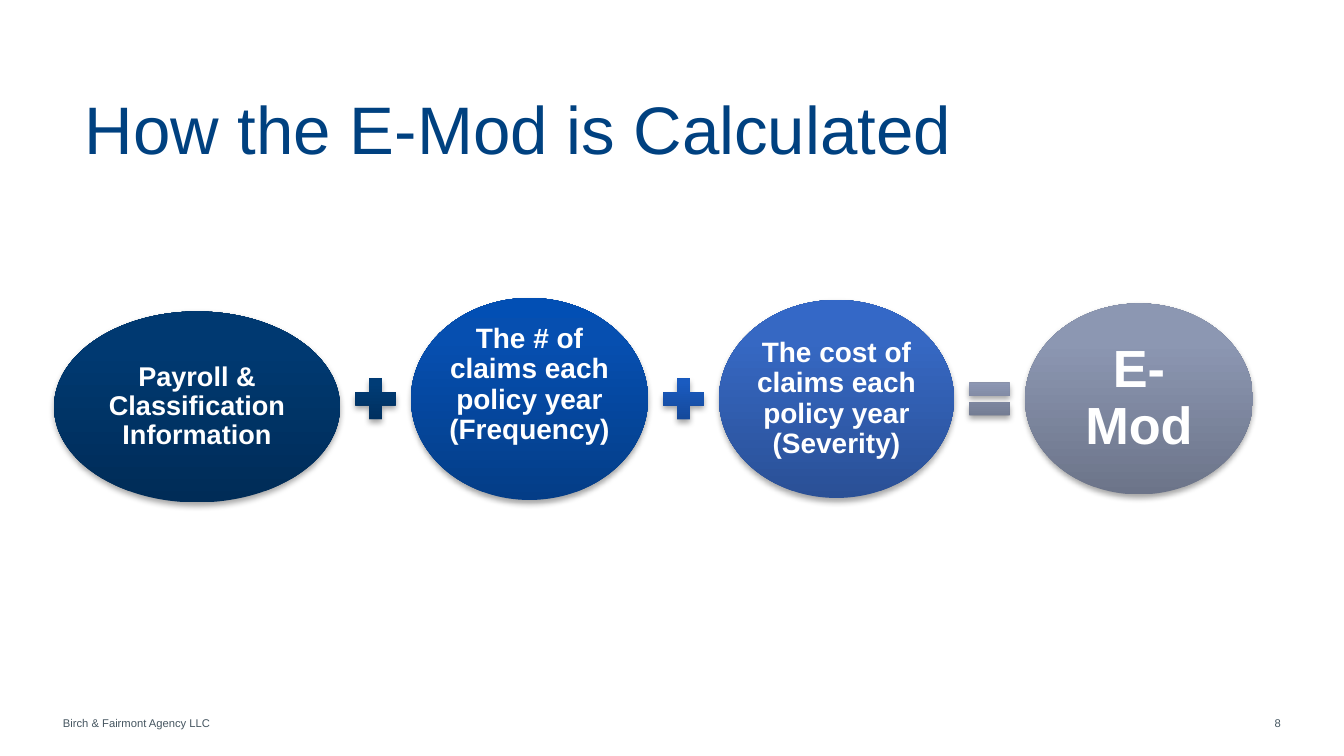
"""Build the slide showing how the E-Mod is calculated."""
import copy

import lxml.etree
import pptx
import pptx.dml.color
import pptx.enum.shapes
import pptx.enum.text
import pptx.oxml.ns
import pptx.util

PX = 914400 / 134.4
ALIGN = pptx.enum.text.PP_ALIGN
ANCHOR = pptx.enum.text.MSO_ANCHOR
SHAPE = pptx.enum.shapes.MSO_SHAPE
COLORS = {
    "title": "004180",
    "small": "455560",
    "label": "FFFFFF",
    "shadow": "000000",
    "payroll": ("002C57", "003971", "003971"),
    "first plus": ("002E5B", "003C76", "003C77"),
    "frequency": ("043D87", "064FB0", "024FB4"),
    "second plus": ("144694", "1A5BC0", "175BC4"),
    "severity": ("2A5096", "3668C3", "3468C7"),
    "equals": ("6C7489", "8C96B2", "8C97B4"),
    "result": ("6C7489", "8C97B2", "8C97B4"),
}


def box(*lengths):
    return [round(length * PX) for length in lengths]


def write(shape, text, size, color, align, anchor, insets=(0, 0, 0, 0), wrap=True, bold=False):
    frame = shape.text_frame
    frame.text = text
    frame.word_wrap = wrap
    frame.auto_size = pptx.enum.text.MSO_AUTO_SIZE.NONE
    frame.vertical_anchor = anchor
    frame.margin_left, frame.margin_top, frame.margin_right, frame.margin_bottom = box(*insets)
    paragraph = frame.paragraphs[0]
    paragraph.alignment = align
    font = paragraph.runs[0].font
    font.name = "Arial"
    font.size = pptx.util.Pt(size)
    font.bold = bold
    font.color.rgb = pptx.dml.color.RGBColor.from_string(COLORS[color])
    return paragraph


deck = pptx.Presentation()
deck.slide_width, deck.slide_height = box(1344, 756)
slide = deck.slides.add_slide(deck.slide_layouts[5])

title = slide.shapes.title
title.left, title.top, title.width, title.height = box(85, 101, 1185, 65)
heading = write(title, "How the E-Mod is Calculated", 36, "title", ALIGN.LEFT, ANCHOR.TOP, wrap=False)
heading.line_spacing = 0.83

footer = slide.shapes.add_textbox(*box(63, 719, 405, 11))
write(footer, "Birch & Fairmont Agency LLC", 6, "small", ALIGN.LEFT, ANCHOR.BOTTOM, wrap=False)
page_number = slide.shapes.add_textbox(*box(1253, 716, 28, 13))
write(page_number, "8", 6, "small", ALIGN.RIGHT, ANCHOR.TOP)

GAP = 8
SIGN = 55
EVEN = (2, 2, 2, 2)
equation = [
    ("payroll", SHAPE.OVAL, 286, 191, 407, "Payroll & Classification Information", 14.5, EVEN),
    ("first plus", SHAPE.MATH_PLUS, SIGN, SIGN, 399, None, None, None),
    ("frequency", SHAPE.OVAL, 237, 202, 399, "The # of claims each policy year (Frequency)", 15, (1, 2, 1, 30)),
    ("second plus", SHAPE.MATH_PLUS, SIGN, SIGN, 399, None, None, None),
    ("severity", SHAPE.OVAL, 235, 198, 399, "The cost of claims each policy year (Severity)", 15, EVEN),
    ("equals", SHAPE.MATH_EQUAL, SIGN, SIGN, 399, None, None, None),
    ("result", SHAPE.OVAL, 228, 191, 399, "E-Mod", 28, (5, 5, 5, 5)),
]

left = 54
for part, kind, width, height, middle, text, size, insets in equation:
    term = slide.shapes.add_shape(kind, *box(left, middle - height / 2, width, height))
    left += width + GAP
    term.line.fill.background()

    term.fill.gradient()
    term.fill.gradient_angle = 90
    stops = term._element.spPr.find(".//" + pptx.oxml.ns.qn("a:gsLst"))
    stops.append(copy.deepcopy(stops[-1]))
    for stop, position, color in zip(term.fill.gradient_stops, (0, 0.8, 1), COLORS[part]):
        stop.position = position
        stop.color.rgb = pptx.dml.color.RGBColor.from_string(color)

    term.shadow.inherit = False
    effects = term._element.spPr.find(pptx.oxml.ns.qn("a:effectLst"))
    shadow = lxml.etree.SubElement(
        effects, pptx.oxml.ns.qn("a:outerShdw"),
        blurRad="40000", dist="23000", dir="5400000", rotWithShape="0")
    shade = lxml.etree.SubElement(shadow, pptx.oxml.ns.qn("a:srgbClr"), val=COLORS["shadow"])
    lxml.etree.SubElement(shade, pptx.oxml.ns.qn("a:alpha"), val="35000")

    if text:
        label = write(term, text, size, "label", ALIGN.CENTER, ANCHOR.MIDDLE, insets, bold=True)
        label.line_spacing = 0.9

deck.save("out.pptx")
